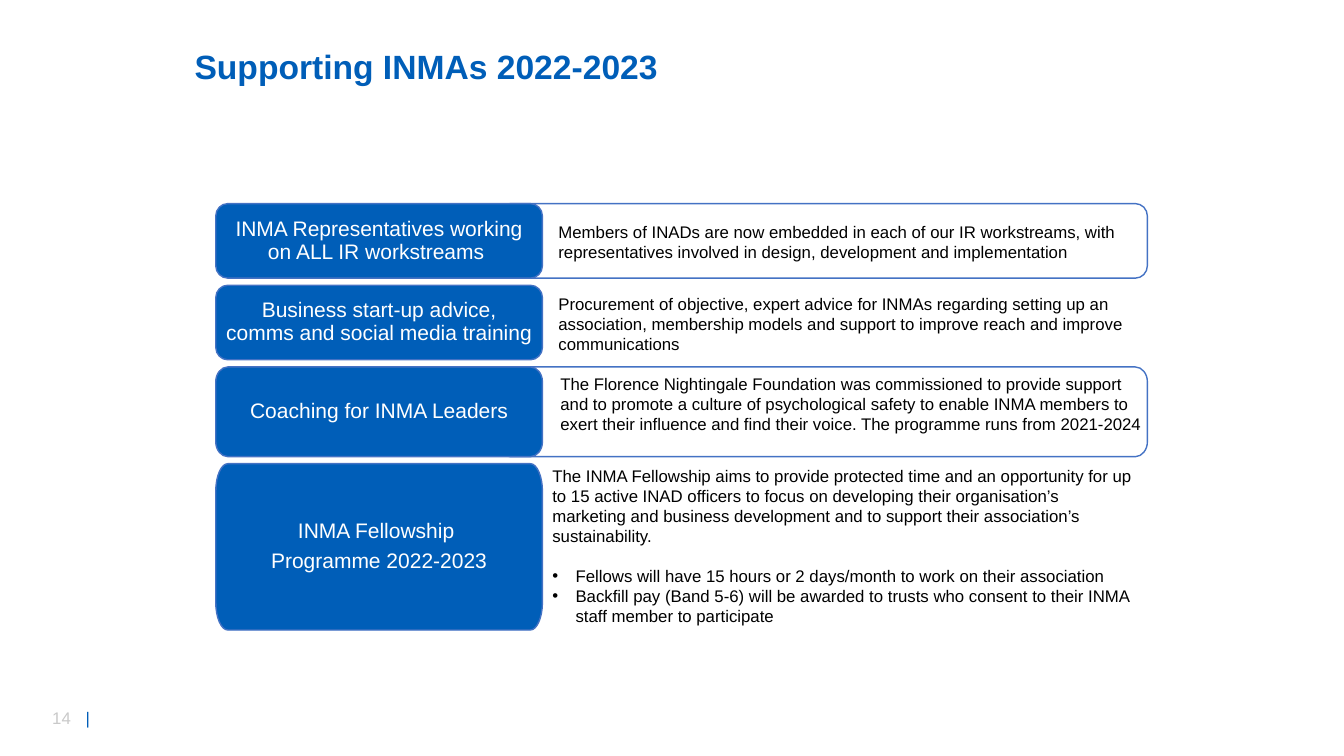
import pptx
import pptx.dml.color
import pptx.enum.text
import pptx.oxml.ns
import pptx.util
import lxml.etree

PX = 9144  # 100 px to the inch
BLUE, EDGE, GREY = "005EB8", "4472C4", "C9C9C9"
ANCHOR = pptx.enum.text.MSO_ANCHOR
ALIGN = pptx.enum.text.PP_ALIGN
FIT = pptx.enum.text.MSO_AUTO_SIZE
qn = pptx.oxml.ns.qn


def color(code):
    return pptx.dml.color.RGBColor.from_string(code)


def write(para, text, size, code, **style):
    """Add a run and format it together with its paragraph."""
    run = para.add_run()
    run.text = text
    run.font.color.rgb = color(code)
    for key, value in {"name": "Arial", "size": pptx.util.Pt(size), "bold": False}.items():
        setattr(run.font, key, value)
    for key, value in style.items():
        setattr(run.font if key == "bold" else para, key, value)


prs = pptx.Presentation()
prs.slide_width, prs.slide_height = 1333 * PX, 750 * PX
slide = prs.slides.add_slide(prs.slide_layouts[5])
shapes = slide.shapes

# Title
title = shapes.title
for key, value in {"left": 183, "top": 45, "width": 882, "height": 50}.items():
    setattr(title, key, value * PX)
frame = title.text_frame
for key, value in {"vertical_anchor": ANCHOR.TOP, "auto_size": FIT.NONE, "word_wrap": True}.items():
    setattr(frame, key, value)
write(frame.paragraphs[0], "Supporting INMAs 2022-2023", 24, BLUE,
      bold=True, alignment=ALIGN.LEFT, line_spacing=0.9)

# Page number, with a tab before the bar
foot = shapes.add_textbox(42 * PX, 697 * PX, 94 * PX, 30 * PX)
para = foot.text_frame.paragraphs[0]
props = para._p.get_or_add_pPr()
tabs = lxml.etree.SubElement(props, qn("a:tabLst"))
lxml.etree.SubElement(tabs, qn("a:tab"), pos=str(33 * PX), algn="l")
write(para, "14\t", 12, GREY)
write(para, "|", 12, BLUE)

# Rows: top, height, outlined, label lines, text box (left, top, width, height), body, bullets
rows = [
    (202, 74, True, ["INMA Representatives working on ALL IR workstreams "], (544, 215, 609, 50),
     "Members of INADs are now embedded in each of our IR workstreams, with "
     "representatives involved in design, development and implementation", []),
    (283, 74, False, ["Business start-up advice, comms and social media training"], (544, 286, 597, 71),
     "Procurement of objective, expert advice for INMAs regarding setting up an association, "
     "membership models and support to improve reach and improve communications", []),
    (364, 89, True, ["Coaching for INMA Leaders"], (546, 366, 597, 71),
     "The Florence Nightingale Foundation was commissioned to provide support and to promote "
     "a culture of psychological safety to enable INMA members to exert their influence and "
     "find their voice. The programme runs from 2021-2024", []),
    (460, 165, False, ["INMA Fellowship ", "Programme 2022-2023"], (538, 457, 599, 172),
     "The INMA Fellowship aims to provide protected time and an opportunity for up to 15 active "
     "INAD officers to focus on developing their organisation’s marketing and business "
     "development and to support their association’s sustainability.",
     ["Fellows will have 15 hours or 2 days/month to work on their association",
      "Backfill pay (Band 5-6) will be awarded to trusts who consent to their INMA "
      "staff member to participate"]),
]

for top, high, framed, label, place, body, bullets in rows:
    # Outline behind, then the label panel; each corner is one curve
    parts = [(494, 644, False)] if framed else []
    for left, wide, solid in parts + [(214, 324, True)]:
        rx, ry = 12, high / 6
        right, base = left + wide, top + high
        dots = []
        for x, y, start, end in [(left, top, (0, ry), (rx, 0)), (right, top, (-rx, 0), (0, ry)),
                                 (right, base, (0, -ry), (-rx, 0)), (left, base, (rx, 0), (0, -ry))]:
            for (dx, dy), part in [(start, 1), (start, 0.45), (end, 0.45), (end, 1)]:
                dots.append(((x + dx * part) * PX, (y + dy * part) * PX))
        draft = shapes.build_freeform(*dots[0])
        draft.add_line_segments(dots[1:], close=True)
        panel = draft.convert_to_shape()
        lines = list(panel._element.iter(qn("a:lnTo")))
        for first in range(0, 15, 4):
            curve = lxml.etree.Element(qn("a:cubicBezTo"))
            lines[first].addprevious(curve)
            for line in lines[first:first + 3]:
                curve.append(line[0])
                line.getparent().remove(line)
        panel.shadow.inherit = False
        panel.line.color.rgb = color(EDGE)
        panel.line.width = pptx.util.Pt(1)
        if not solid:
            panel.fill.background()
            continue
        panel.fill.solid()
        panel.fill.fore_color.rgb = color(BLUE)
        frame = panel.text_frame
        for side in ("left", "top", "right", "bottom"):
            setattr(frame, "margin_" + side, 10 * PX)
        frame.word_wrap = True
        frame.vertical_anchor = ANCHOR.MIDDLE
        for num, text in enumerate(label):
            para = frame.add_paragraph() if num else frame.paragraphs[0]
            write(para, text, 15, "FFFFFF", alignment=ALIGN.CENTER,
                  line_spacing=0.9, space_after=pptx.util.Pt(5))

    # Description and its bullets
    box = shapes.add_textbox(*[side * PX for side in place])
    frame = box.text_frame
    frame.word_wrap = True
    frame.auto_size = FIT.SHAPE_TO_FIT_TEXT
    write(frame.paragraphs[0], body, 12, "000000")
    for num, text in enumerate(bullets):
        para = frame.add_paragraph()
        props = para._p.get_or_add_pPr()
        props.set("marL", str(23 * PX))
        props.set("indent", str(-23 * PX))
        lxml.etree.SubElement(props, qn("a:buFont"), typeface="Arial")
        lxml.etree.SubElement(props, qn("a:buChar"), char="•")
        write(para, text, 12, "000000", space_before=pptx.util.Pt(0 if num else 14))

prs.save("out.pptx")
